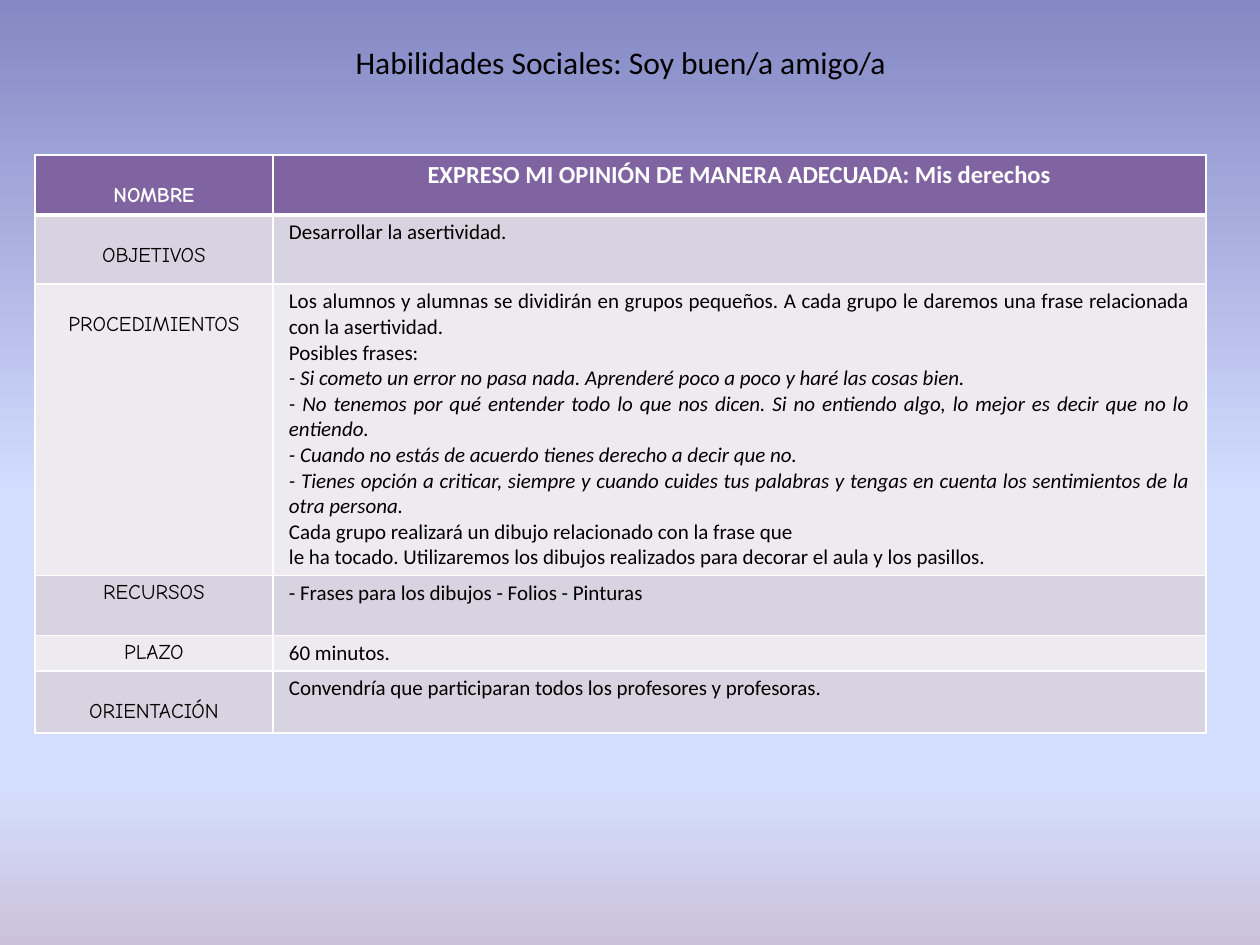
from lxml.etree import SubElement
from pptx import Presentation
from pptx.dml.color import RGBColor
from pptx.enum.text import MSO_ANCHOR, PP_ALIGN
from pptx.oxml import parse_xml
from pptx.oxml.ns import nsdecls, qn
from pptx.util import Pt

EMU_PER_PX = 914400 / 126

BLACK = RGBColor(0x00, 0x00, 0x00)
WHITE = RGBColor(0xFF, 0xFF, 0xFF)
PURPLE = RGBColor(0x80, 0x64, 0xA2)
LILAC = RGBColor(0xD8, 0xD3, 0xE0)
PALE_LILAC = RGBColor(0xED, 0xEA, 0xF0)
INDIGO = RGBColor(0x84, 0x88, 0xC4)
SKY = RGBColor(0xD4, 0xDE, 0xFF)
MAUVE = RGBColor(0xCC, 0xC1, 0xDA)

BACKGROUND_STOPS = [(0, INDIGO), (53, SKY), (83, SKY), (100, MAUVE)]

LABEL_FONT = "Comic Neue"
BODY_FONT = "Calibri"
COLUMN_WIDTHS = [238, 933]
SIDE_MARGIN, EDGE_MARGIN, LOWERED_MARGIN = 16, 5, 29

# Label, height, whether the label sits one line lower, paragraphs
ROWS = [
    ("NOMBRE", 60, True, ["EXPRESO MI OPINIÓN DE MANERA ADECUADA: Mis derechos"]),
    ("OBJETIVOS", 69, True, ["Desarrollar la asertividad."]),
    ("PROCEDIMIENTOS", 291, True, [
        "Los alumnos y alumnas se dividirán en grupos pequeños. A cada grupo le "
        "daremos una frase relacionada con la asertividad.",
        "Posibles frases:",
        "- Si cometo un error no pasa nada. Aprenderé poco a poco y haré las cosas bien.",
        "- No tenemos por qué entender todo lo que nos dicen. Si no entiendo algo, "
        "lo mejor es decir que no lo entiendo.",
        "- Cuando no estás de acuerdo tienes derecho a decir que no.",
        "- Tienes opción a criticar, siempre y cuando cuides tus palabras y tengas "
        "en cuenta los sentimientos de la otra persona.",
        "Cada grupo realizará un dibujo relacionado con la frase que",
        "le ha tocado. Utilizaremos los dibujos realizados para decorar el aula y "
        "los pasillos.",
    ]),
    ("RECURSOS", 60, False, ["- Frases para los dibujos - Folios - Pinturas"]),
    ("PLAZO", 35, False, ["60 minutos."]),
    ("ORIENTACIÓN", 62, True,
     ["Convendría que participaran todos los profesores y profesoras."]),
]


def px(length):
    return round(length * EMU_PER_PX)


def set_font(font, color, **values):
    for name, value in values.items():
        setattr(font, name, value)
    font.color.rgb = color


def paint_background(page):
    fill = page.background.fill
    fill.gradient()
    fill.gradient_angle = 270
    stops = next(page.element.iter(qn("a:gsLst")))
    for stop in list(stops):
        stops.remove(stop)
    for percent, color in BACKGROUND_STOPS:
        stop = SubElement(stops, qn("a:gs"), pos=str(percent * 1000))
        SubElement(stop, qn("a:srgbClr"), val=str(color))


def add_title(page, text):
    title = page.shapes.title
    title.left, title.top, title.width, title.height = map(px, (343, 37, 605, 50))
    frame = title.text_frame
    frame.word_wrap = True
    frame.vertical_anchor = MSO_ANCHOR.TOP
    para = frame.paragraphs[0]
    para.text = text
    para.alignment = PP_ALIGN.LEFT
    set_font(para.font, BLACK, size=Pt(18), name=BODY_FONT)


def set_borders(cell, top, bottom):
    properties = cell._tc.get_or_add_tcPr()
    widths = {"lnL": 1, "lnR": 1, "lnT": top, "lnB": bottom}
    for index, (tag, width) in enumerate(widths.items()):
        properties.insert(index, parse_xml(
            f'<a:{tag} {nsdecls("a")} w="{Pt(width)}"><a:solidFill>'
            f'<a:srgbClr val="{WHITE}"/></a:solidFill></a:{tag}>'))


def fill_cell(cell, texts, alignment, color, top_margin=EDGE_MARGIN, **font_values):
    margins = {"margin_left": SIDE_MARGIN, "margin_right": SIDE_MARGIN,
               "margin_top": top_margin, "margin_bottom": EDGE_MARGIN}
    for name, length in margins.items():
        setattr(cell, name, px(length))
    frame = cell.text_frame
    for index, text in enumerate(texts):
        para = frame.paragraphs[0] if index == 0 else frame.add_paragraph()
        para.text = text
        para.alignment = alignment
        # The example sentences are the ones led by a dash in a longer list
        italic = len(texts) > 1 and text.startswith("- ")
        set_font(para.font, color, italic=italic, **font_values)


def add_activity_table(page):
    heights = [height for _, height, _, _ in ROWS]
    frame = page.shapes.add_table(len(ROWS), len(COLUMN_WIDTHS), px(35), px(155),
                                  px(sum(COLUMN_WIDTHS)), px(sum(heights)))
    table = frame.table
    for column, width in zip(table.columns, COLUMN_WIDTHS):
        column.width = px(width)

    for index, (label, height, lowered, texts) in enumerate(ROWS):
        row = table.rows[index]
        row.height = px(height)
        header = index == 0
        color = WHITE if header else BLACK
        fill = PURPLE if header else (PALE_LILAC, LILAC)[index % 2]
        label_cell, body_cell = row.cells

        fill_cell(label_cell, [label], PP_ALIGN.CENTER, color,
                  LOWERED_MARGIN if lowered else EDGE_MARGIN,
                  name=LABEL_FONT, size=Pt(12), bold=header)
        fill_cell(body_cell, texts, PP_ALIGN.CENTER if header else PP_ALIGN.JUSTIFY,
                  color, name=BODY_FONT, size=Pt(14 if header else 12), bold=header)
        for cell in row.cells:
            cell.fill.solid()
            cell.fill.fore_color.rgb = fill
            set_borders(cell, top=3 if index == 1 else 1, bottom=3 if header else 1)


def main():
    deck = Presentation()
    deck.slide_width, deck.slide_height = px(1260), px(945)
    page = deck.slides.add_slide(deck.slide_layouts[5])
    paint_background(page)
    add_activity_table(page)
    add_title(page, "Habilidades Sociales: Soy buen/a amigo/a")
    deck.save("out.pptx")


if __name__ == "__main__":
    main()
